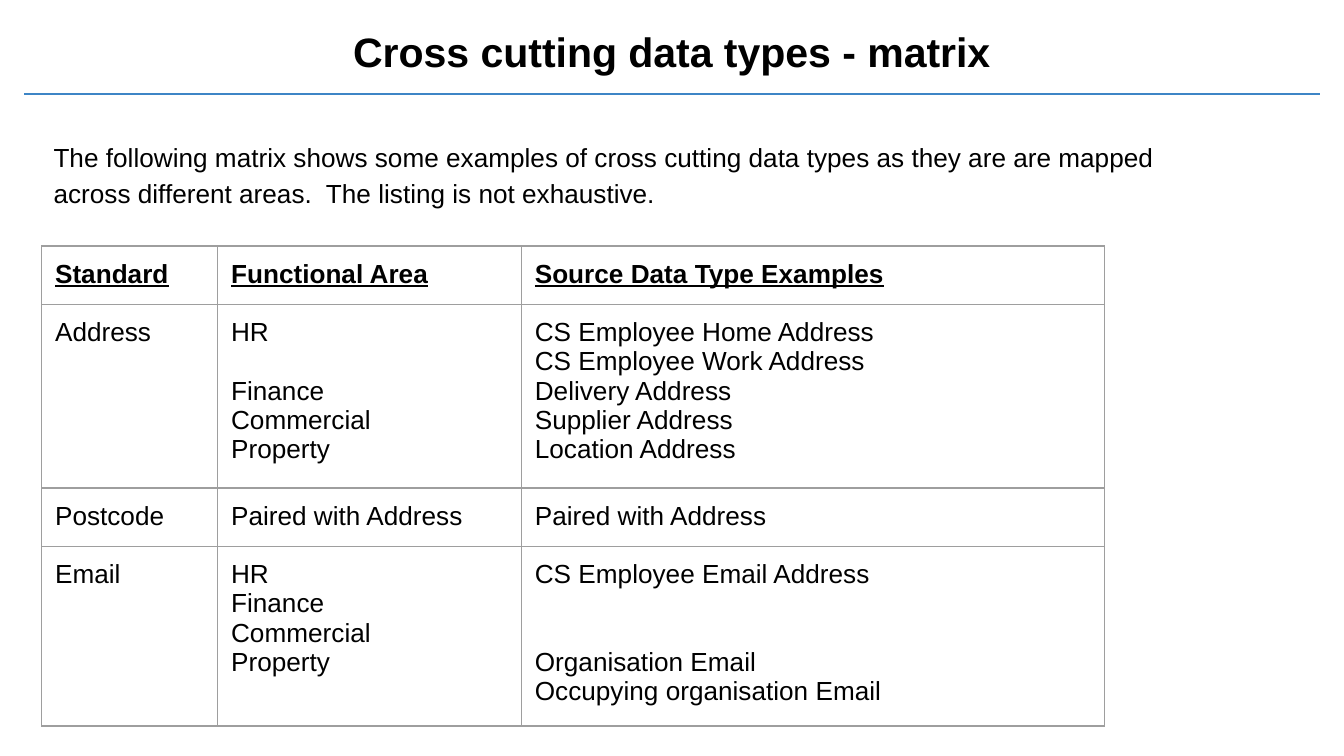
from lxml.etree import SubElement
from pptx import Presentation
from pptx.dml.color import RGBColor
from pptx.enum.shapes import MSO_CONNECTOR
from pptx.enum.text import MSO_ANCHOR, MSO_AUTO_SIZE, PP_ALIGN
from pptx.oxml.ns import qn
from pptx.util import Inches, Pt

BLACK = RGBColor(0x00, 0x00, 0x00)
BLUE = RGBColor(0x3D, 0x85, 0xC6)
GREY = RGBColor(0x9E, 0x9E, 0x9E)

FONT = "Arial"
BODY_SIZE = 14
LINE_HEIGHT = 15.7  # points taken by one line of body text
INSET = Inches(0.1)
WIDTH = 10
HEIGHT = WIDTH * 9 / 16

COLUMN_WIDTHS = [1.31, 2.26, 4.34]
ROW_HEIGHT = 0.42  # least height; rows grow with their text
# Each cell lists its lines; a number skips that many lines
MATRIX = [
    [["Standard"], ["Functional Area"], ["Source Data Type Examples"]],
    [["Address"],
     ["HR", 1, "Finance", "Commercial", "Property"],
     ["CS Employee Home Address", "CS Employee Work Address",
      "Delivery Address", "Supplier Address", "Location Address"]],
    [["Postcode"], ["Paired with Address"], ["Paired with Address"]],
    [["Email"],
     ["HR", "Finance", "Commercial", "Property"],
     ["CS Employee Email Address", 2, "Organisation Email",
      "Occupying organisation Email"]],
]


def style_font(font, size, bold=False, underline=False):
    font.name = FONT
    font.size = Pt(size)
    font.bold = bold
    font.underline = underline
    font.color.rgb = BLACK


def set_insets(target):
    target.margin_left = target.margin_right = INSET
    target.margin_top = target.margin_bottom = INSET


def add_text(slide, box, text, size, bold=False):
    shape = slide.shapes.add_textbox(*map(Inches, box))
    frame = shape.text_frame
    frame.word_wrap = True
    frame.vertical_anchor = MSO_ANCHOR.TOP
    set_insets(frame)
    paragraph = frame.paragraphs[0]
    paragraph.text = text
    style_font(paragraph.font, size, bold)
    return frame, paragraph


def add_header(slide, box):
    # Rule across the slide
    left, top, width, height = box
    rule_y = Inches(top + 0.6)
    rule = slide.shapes.add_connector(MSO_CONNECTOR.STRAIGHT, Inches(left), rule_y,
                                      Inches(left + width), rule_y)
    rule.line.color.rgb = BLUE
    rule.line.width = Pt(1.5)
    SubElement(rule._element.spPr, qn("a:effectLst"))

    # Centred title
    _, paragraph = add_text(slide, (left + 0.16, top, width - 0.32, height),
                            "Cross cutting data types - matrix", 22, bold=True)
    paragraph.alignment = PP_ALIGN.CENTER


def add_introduction(slide, box):
    frame, paragraph = add_text(
        slide, box,
        "The following matrix shows some examples of cross cutting data types as they "
        "are are mapped across different areas.  The listing is not exhaustive.",
        BODY_SIZE)
    frame.auto_size = MSO_AUTO_SIZE.SHAPE_TO_FIT_TEXT
    paragraph.line_spacing = 1.15


def set_borders(cell):
    properties = cell._tc.get_or_add_tcPr()
    for position, side in enumerate(("a:lnL", "a:lnR", "a:lnT", "a:lnB")):
        line = SubElement(properties, qn(side), w=str(Pt(0.75)))
        fill = SubElement(line, qn("a:solidFill"))
        SubElement(fill, qn("a:srgbClr"), val=str(GREY))
        properties.insert(position, line)


def fill_cell(cell, lines, heading):
    cell.fill.background()
    set_borders(cell)
    set_insets(cell)
    frame = cell.text_frame
    paragraph, skipped = frame.paragraphs[0], 0
    for index, line in enumerate(lines):
        if isinstance(line, int):
            skipped = line
            continue
        if index:
            paragraph = frame.add_paragraph()
        paragraph.text = line
        if skipped:
            paragraph.space_before = Pt(skipped * LINE_HEIGHT)
            skipped = 0
        style_font(paragraph.font, BODY_SIZE, bold=heading, underline=heading)


def add_matrix(slide, box):
    table = slide.shapes.add_table(len(MATRIX), len(COLUMN_WIDTHS),
                                   *map(Inches, box)).table
    table.first_row = table.horz_banding = False
    for column, width in zip(table.columns, COLUMN_WIDTHS):
        column.width = Inches(width)
    for row_index, row in enumerate(MATRIX):
        table.rows[row_index].height = Inches(ROW_HEIGHT)
        for column_index, lines in enumerate(row):
            fill_cell(table.cell(row_index, column_index), lines, row_index == 0)


def main():
    presentation = Presentation()
    presentation.slide_width = Inches(WIDTH)
    presentation.slide_height = Inches(HEIGHT)
    slide = presentation.slides.add_slide(presentation.slide_layouts[6])
    add_header(slide, (0.18, 0.1, WIDTH - 2 * 0.18, 0.63))
    add_matrix(slide, (0.31, 1.83, sum(COLUMN_WIDTHS), len(MATRIX) * ROW_HEIGHT))
    add_introduction(slide, (0.3, 0.92, 8.95, 0.71))
    presentation.save("out.pptx")


if __name__ == "__main__":
    main()
